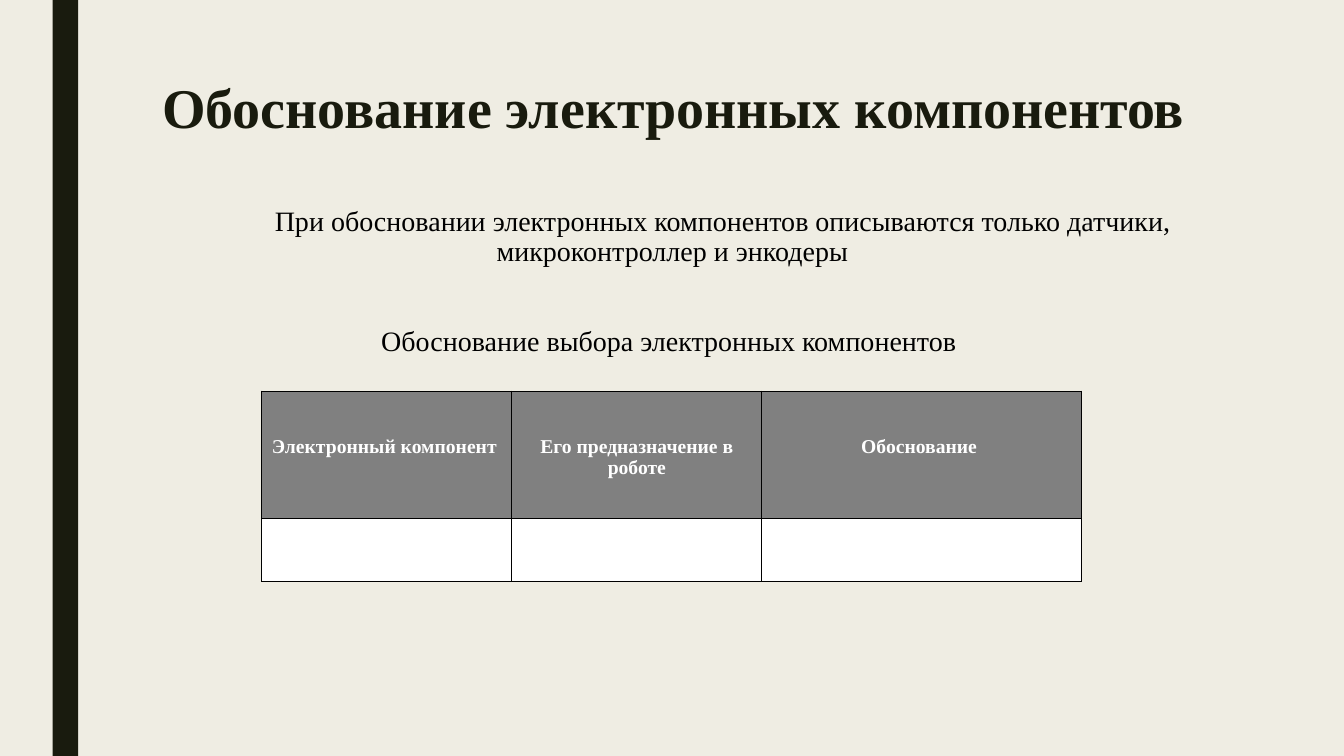
from lxml import etree
from pptx import Presentation
from pptx import util as u
from pptx.dml.color import RGBColor
from pptx.enum import shapes, text
from pptx.oxml import ns

DARK = RGBColor(0x19, 0x1B, 0x0E)
CREAM = RGBColor(0xEF, 0xED, 0xE3)
GREY = RGBColor(0x80, 0x80, 0x80)
WHITE = RGBColor(0xFF, 0xFF, 0xFF)
BLACK = RGBColor(0, 0, 0)


def write(paragraph, words, **font_format):
    paragraph.alignment = text.PP_ALIGN.CENTER
    run = paragraph.add_run()
    run.text = words
    run.font.name = "Times New Roman"
    run.font.color.rgb = font_format.pop("color")
    for key, value in font_format.items():
        setattr(run.font, key, value)


def border(cell, color, width):
    props = cell._tc.get_or_add_tcPr()
    for index, side in enumerate(("lnL", "lnR", "lnT", "lnB")):
        line = etree.Element(ns.qn(f"a:{side}"), w=str(width))
        fill = etree.SubElement(line, ns.qn("a:solidFill"))
        etree.SubElement(fill, ns.qn("a:srgbClr"), val=str(color))
        props.insert(index, line)


prs = Presentation()
prs.slide_width, prs.slide_height = u.Cm(33.87), u.Cm(19.05)
slide = prs.slides.add_slide(prs.slide_layouts[6])
slide.background.fill.solid()
slide.background.fill.fore_color.rgb = CREAM

# Side stripe
stripe = slide.shapes.add_shape(
    shapes.MSO_SHAPE.RECTANGLE, u.Cm(1.33), 0, u.Cm(0.64), prs.slide_height)
stripe.shadow.inherit = False
stripe.fill.solid()
stripe.fill.fore_color.rgb = DARK
stripe.line.fill.background()

# Title
title = slide.shapes.add_textbox(
    u.Cm(3.81), u.Cm(1.9), u.Cm(26.67), u.Cm(4.11)).text_frame
title.word_wrap = True
title.paragraphs[0].line_spacing = 0.89
write(title.paragraphs[0], "Обоснование электронных компонентов ",
      size=u.Pt(40), bold=True, color=DARK)

# Explanation and table caption
body = slide.shapes.add_textbox(
    u.Cm(2.34), u.Cm(4.37), u.Cm(29.21), u.Cm(5.49)).text_frame
body.word_wrap = True
body.vertical_anchor = text.MSO_ANCHOR.MIDDLE
explanation, caption = body.paragraphs[0], body.add_paragraph()
for paragraph, words in (
    (explanation, "При обосновании электронных компонентов описываются "
                  "только датчики, микроконтроллер и энкодеры"),
    (caption, "Обоснование выбора электронных компонентов "),
):
    paragraph.line_spacing = 0.9
    write(paragraph, words, size=u.Pt(20), color=BLACK)
explanation._p.get_or_add_pPr().set("indent", str(u.Cm(2.54)))
caption.space_before = u.Pt(43)

# Component table
headings = ["Электронный компонент ", "Его предназначение в роботе", "Обоснование "]
components = slide.shapes.add_table(
    2, len(headings), u.Cm(6.6), u.Cm(9.86), u.Cm(20.65), u.Cm(4.8)).table
for column, width in zip(components.columns, (6.3, 6.3, 8.05)):
    column.width = u.Cm(width)
for row, height, fill in zip(components.rows, (3.2, 1.6), (GREY, WHITE)):
    row.height = u.Cm(height)
    for cell in row.cells:
        cell.fill.solid()
        cell.fill.fore_color.rgb = fill
        border(cell, BLACK, u.Pt(1))
cell_format = {"margin_left": u.Cm(0.18), "margin_right": u.Cm(0.18),
               "margin_top": u.Cm(1.12), "margin_bottom": 0}
for cell, heading in zip(components.rows[0].cells, headings):
    for key, value in cell_format.items():
        setattr(cell, key, value)
    write(cell.text_frame.paragraphs[0], heading,
          size=u.Pt(14), bold=True, color=WHITE)

prs.save("out.pptx")
